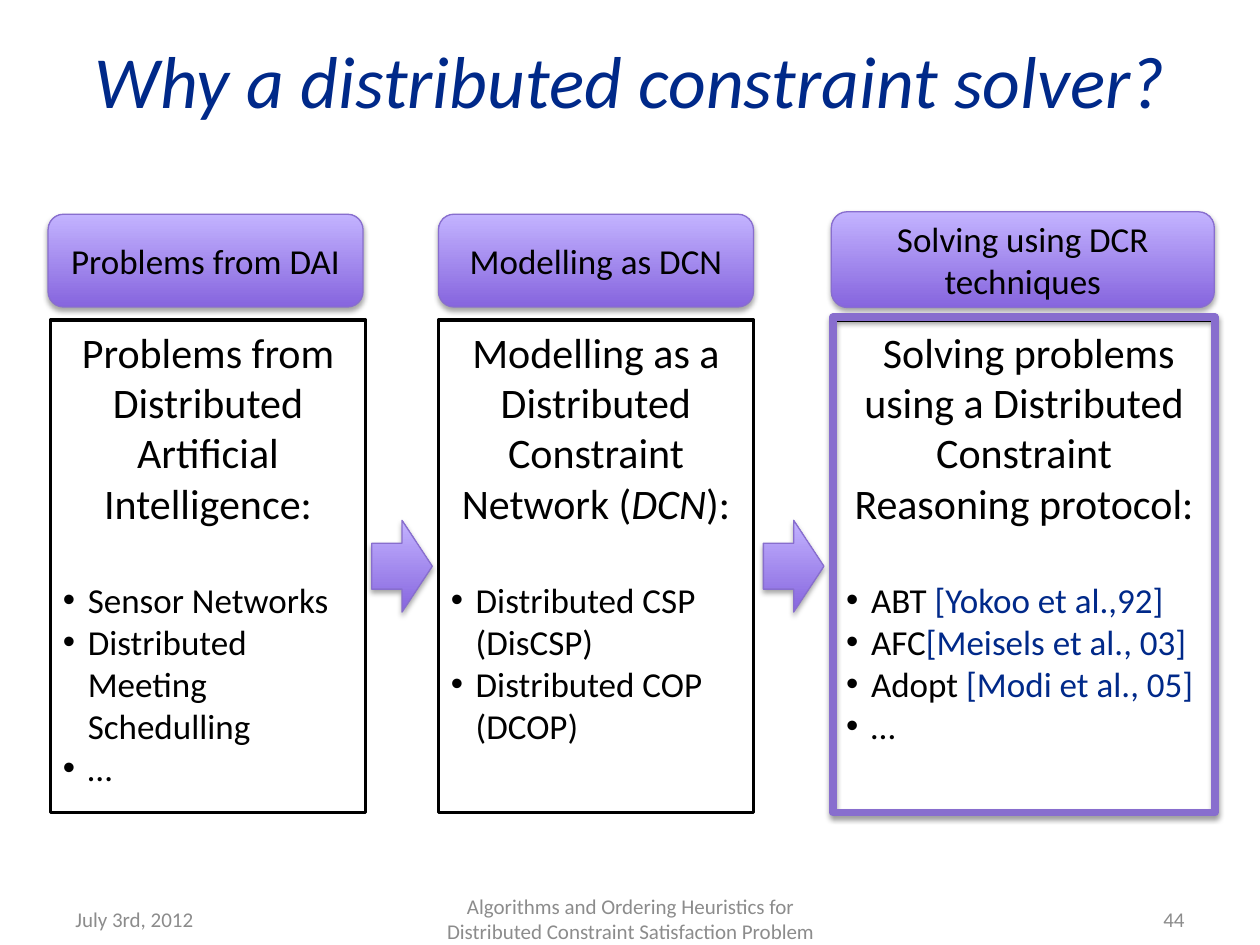
"""Build the slide explaining why a distributed constraint solver is needed."""
import pptx
import pptx.dml.color
import pptx.enum.shapes
import pptx.enum.text
import pptx.oxml
import pptx.oxml.ns
import pptx.util

Cm = pptx.util.Cm
Pt = pptx.util.Pt
RGBColor = pptx.dml.color.RGBColor
SHAPE = pptx.enum.shapes.MSO_SHAPE
ALIGN = pptx.enum.text.PP_ALIGN
ANCHOR = pptx.enum.text.MSO_ANCHOR

BLACK = RGBColor(0x00, 0x00, 0x00)
WHITE = RGBColor(0xFF, 0xFF, 0xFF)
NAVY = RGBColor(0x00, 0x29, 0x89)
GRAY = RGBColor(0x8C, 0x8C, 0x8C)
PURPLE = RGBColor(0x88, 0x6E, 0xCE)
DARK_PURPLE = RGBColor(0x86, 0x65, 0xDE)
LIGHT_PURPLE = RGBColor(0xC3, 0xB3, 0xFF)

TITLE = "Why a distributed constraint solver?"
COLUMNS = [
    {
        "left": 1.02, "width": 6.35,
        "header": "Problems from DAI", "header_at": (0.97, 4.32, 6.35, 1.87),
        "lead": ["Problems from Distributed Artificial Intelligence:"],
        "items": [["Sensor Networks"], ["Distributed Meeting Schedulling"], ["…"]],
    },
    {
        "left": 8.84, "width": 6.35,
        "header": "Modelling as DCN", "header_at": (8.84, 4.32, 6.35, 1.87),
        "lead": ["Modelling as a Distributed Constraint Network (",
                 ("DCN", {"italic": True}), "):"],
        "items": [["Distributed CSP (DisCSP)"], ["Distributed COP (DCOP)"]],
    },
    {
        "left": 16.81, "width": 7.67,
        "header": "Solving using DCR techniques", "header_at": (16.76, 4.27, 7.72, 1.93),
        "lead": [" Solving problems using a Distributed Constraint Reasoning protocol:"],
        "items": [
            ["ABT ", ("[Yokoo et al.,92]", {"color": NAVY})],
            ["AFC", ("[Meisels et al., 03]", {"color": NAVY})],
            ["Adopt ", ("[Modi et al., 05]", {"color": NAVY})],
            ["…"],
        ],
    },
]
FOOTERS = [
    ("July 3rd, 2012", 1.27, 5.92, ALIGN.LEFT),
    ("Algorithms and Ordering Heuristics for Distributed Constraint Satisfaction Problem",
     8.69, 8.05, ALIGN.CENTER),
    ("44", 18.21, 5.92, ALIGN.RIGHT),
]
BODY_TOP, BODY_HEIGHT = 6.45, 9.93
ARROW_WIDTH, ARROW_HEIGHT = 1.22, 1.85
FRAME_AT = (16.79, 6.4, 7.7, 9.98)
FOOTER_TOP, FOOTER_HEIGHT = 18.01, 1.02


def write(para, text, size=20, color=BLACK, italic=False):
    span = para.add_run()
    span.text = text
    span.font.name = "Calibri"
    span.font.size = Pt(size)
    span.font.italic = italic
    span.font.color.rgb = color


def write_spans(para, spans, size):
    for span in spans:
        text, style = (span, {}) if isinstance(span, str) else span
        write(para, text, size=size, **style)


def add_bullet(para):
    properties = para._p.get_or_add_pPr()
    properties.set("marL", str(Cm(0.5)))
    properties.set("indent", str(-Cm(0.5)))
    namespace = pptx.oxml.ns.nsdecls("a")
    properties.append(pptx.oxml.parse_xml(f'<a:buFont {namespace} typeface="Arial"/>'))
    properties.append(pptx.oxml.parse_xml(f'<a:buChar {namespace} char="•"/>'))


def add_box(page, kind, at, line, line_width):
    box = page.shapes.add_shape(kind, *map(Cm, at))
    box.shadow.inherit = False
    box.line.color.rgb = line
    box.line.width = Pt(line_width)
    box.text_frame.word_wrap = True
    return box


def add_shadow(box, opacity, distance):
    effects = box._element.spPr.find(pptx.oxml.ns.qn("a:effectLst"))
    effects.append(pptx.oxml.parse_xml(
        f'<a:outerShdw {pptx.oxml.ns.nsdecls("a")} blurRad="{Pt(3.1)}" dist="{Pt(distance)}" '
        f'dir="5400000" rotWithShape="0"><a:srgbClr val="{BLACK}">'
        f'<a:alpha val="{opacity * 1000}"/></a:srgbClr></a:outerShdw>'))


def add_glossy(page, kind, at):
    box = add_box(page, kind, at, PURPLE, 0.75)
    box.fill.gradient()
    box.fill.gradient_angle = 90
    for stop, color, position in zip(box.fill.gradient_stops, (DARK_PURPLE, LIGHT_PURPLE), (0, 1)):
        stop.color.rgb = color
        stop.position = position
    add_shadow(box, 35, 1.8)
    return box


def add_body(page, column):
    at = (column["left"], BODY_TOP, column["width"], BODY_HEIGHT)
    box = add_box(page, SHAPE.RECTANGLE, at, BLACK, 2)
    box.fill.solid()
    box.fill.fore_color.rgb = WHITE
    frame = box.text_frame
    frame.vertical_anchor = ANCHOR.TOP
    frame.paragraphs[0].alignment = ALIGN.CENTER
    write_spans(frame.paragraphs[0], column["lead"], 24)
    for index, item in enumerate(column["items"]):
        para = frame.add_paragraph()
        para.alignment = ALIGN.LEFT
        para.space_before = Pt(0 if index else 29)
        add_bullet(para)
        write_spans(para, item, 20)


def add_header(page, column):
    box = add_glossy(page, SHAPE.ROUNDED_RECTANGLE, column["header_at"])
    box.text_frame.vertical_anchor = ANCHOR.MIDDLE
    para = box.text_frame.paragraphs[0]
    para.alignment = ALIGN.CENTER
    write(para, column["header"])


def add_arrow(page, before, after):
    middle = (before["left"] + before["width"] + after["left"]) / 2
    top = BODY_TOP + (BODY_HEIGHT - ARROW_HEIGHT) / 2
    add_glossy(page, SHAPE.RIGHT_ARROW,
               (middle - ARROW_WIDTH / 2, top, ARROW_WIDTH, ARROW_HEIGHT))


def add_footer(page, text, left, width, alignment):
    box = page.shapes.add_textbox(Cm(left), Cm(FOOTER_TOP), Cm(width), Cm(FOOTER_HEIGHT))
    box.text_frame.word_wrap = True
    box.text_frame.vertical_anchor = ANCHOR.MIDDLE
    para = box.text_frame.paragraphs[0]
    para.alignment = alignment
    write(para, text, size=12, color=GRAY)


def main():
    deck = pptx.Presentation()
    deck.slide_width, deck.slide_height = Cm(25.4), Cm(19.05)
    page = deck.slides.add_slide(deck.slide_layouts.get_by_name("Title Only"))
    title = page.shapes.title
    title.left, title.top, title.width, title.height = map(Cm, (1.27, 0, 22.86, 3.18))
    title.text_frame.vertical_anchor = ANCHOR.MIDDLE
    title.text_frame.paragraphs[0].alignment = ALIGN.CENTER
    write(title.text_frame.paragraphs[0], TITLE, size=42, color=NAVY, italic=True)
    for column in COLUMNS:
        add_body(page, column)
    for column in COLUMNS:
        add_header(page, column)
    for before, after in zip(COLUMNS, COLUMNS[1:]):
        add_arrow(page, before, after)
    highlight = add_box(page, SHAPE.RECTANGLE, FRAME_AT, PURPLE, 4.5)
    highlight.fill.background()
    add_shadow(highlight, 38, 1.6)
    for footer in FOOTERS:
        add_footer(page, *footer)
    deck.save("out.pptx")


if __name__ == "__main__":
    main()
